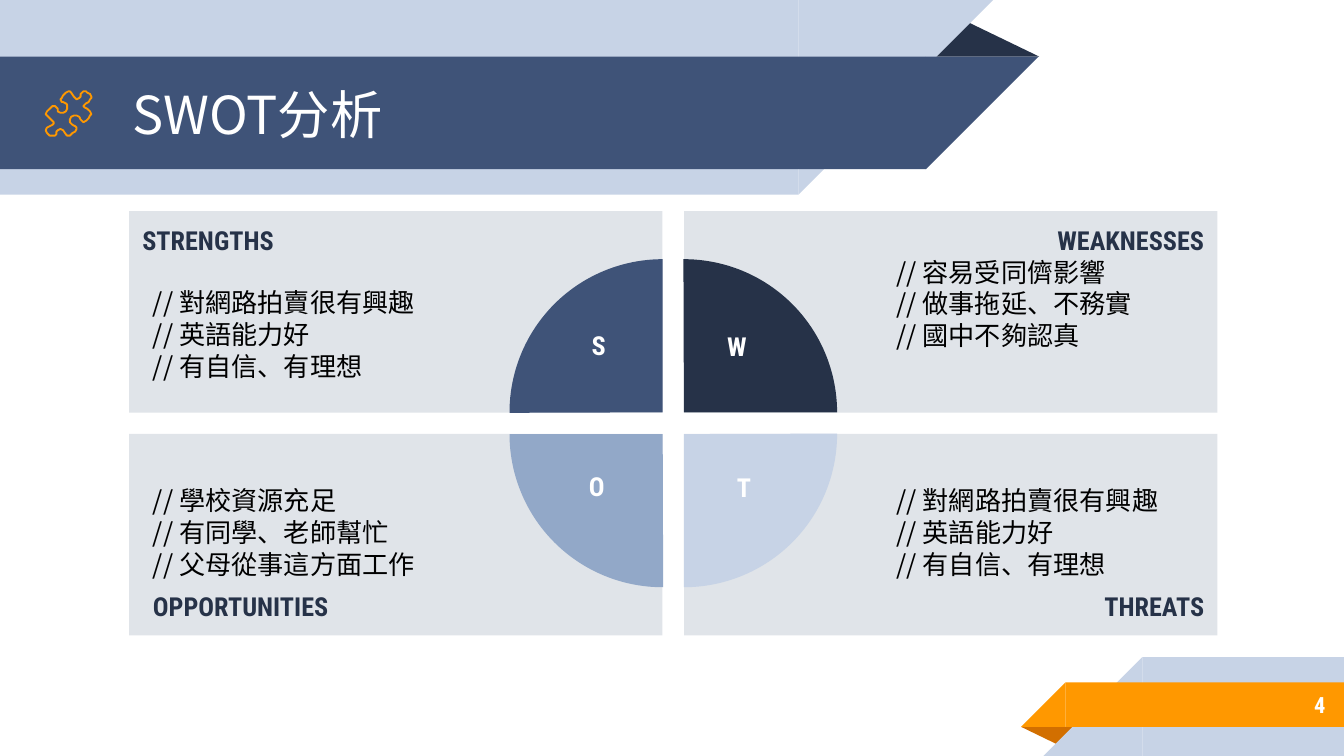
from dataclasses import dataclass

from lxml import etree
from pptx import Presentation, util as u
from pptx.dml.color import RGBColor
from pptx.enum import shapes, text
from pptx.oxml import ns

Cm, Pt = u.Cm, u.Pt
SHAPE, ALIGN, ANCHOR = shapes.MSO_SHAPE, text.PP_ALIGN, text.MSO_ANCHOR


@dataclass(frozen=True)
class Theme:
    navy: str = "3F5378"
    ink: str = "263248"
    steel: str = "92A8C8"
    pale: str = "C7D3E6"
    card: str = "E0E4E9"
    orange: str = "FF9800"
    rust: str = "D26F00"
    white: str = "FFFFFF"
    black: str = "000000"
    cjk: str = "Noto Sans CJK SC"
    latin: str = "Roboto Condensed"
    title_size: float = 28
    body_size: float = 14
    number_size: float = 12
    line_pitch: float = 17


THEME = Theme()

# Outline of the puzzle piece, in hundredths of an inch
PUZZLE = [
    (64, 77), (66, 76), (67, 74), (68, 73), (68, 72), (67, 70), (65, 69),
    (64, 68), (62, 68), (61, 69), (60, 70), (60, 72), (59, 73), (57, 74),
    (56, 73), (55, 72), (53, 69), (52, 68), (51, 68), (49, 69), (47, 71),
    (46, 73), (45, 74), (46, 76), (47, 76), (49, 77), (50, 78), (50, 81),
    (49, 83), (47, 84), (45, 84), (43, 83), (43, 81), (42, 80), (41, 79),
    (39, 79), (37, 81), (35, 83), (34, 85), (35, 86), (37, 88), (39, 90),
    (40, 91), (40, 92), (39, 93), (37, 94), (35, 95), (34, 97), (35, 99),
    (36, 100), (37, 101), (39, 101), (41, 101), (42, 100), (42, 98),
    (43, 97), (45, 96), (47, 97), (49, 100), (50, 101), (52, 101),
    (54, 99), (56, 98), (57, 96), (57, 95), (56, 94), (54, 93), (53, 92),
    (52, 91), (52, 89), (53, 87), (55, 86), (57, 86), (59, 87), (60, 89),
    (61, 90), (62, 91), (64, 90), (66, 88), (67, 86), (68, 85), (67, 83),
    (65, 81), (63, 80), (62, 79), (63, 78),
]

# Heading, letter, letter box (cm), pie colour, lines
QUADRANTS = [
    ("STRENGTHS", "S", (10.97, 6.1, 0.69, 1.09), THEME.navy,
     ["對網路拍賣很有興趣", "英語能力好", "有自信、有理想"]),
    ("WEAKNESSES", "W", (13.41, 6.12, 1.04, 1.04), THEME.ink,
     ["容易受同儕影響", "做事拖延、不務實", "國中不夠認真"]),
    ("OPPORTUNITIES", "O", (10.9, 8.76, 0.76, 1.09), THEME.steel,
     ["學校資源充足", "有同學、老師幫忙", "父母從事這方面工作"]),
    ("THREATS", "T", (13.69, 8.79, 0.74, 1.04), THEME.pale,
     ["對網路拍賣很有興趣", "英語能力好", "有自信、有理想"]),
]


def add_block(slide, kind, box, color, rotation=0, flip=False):
    block = slide.shapes.add_shape(kind, *map(Cm, box))
    block.shadow.inherit = False
    block.fill.solid()
    block.fill.fore_color.rgb = RGBColor.from_string(color)
    block.line.fill.background()
    block.rotation = rotation
    if flip:
        block._element.spPr.find(ns.qn("a:xfrm")).set("flipH", "1")
    return block


def add_ribbon(slide, box, color, header):
    """A band whose slanted end faces the middle of the slide."""
    x, y, width, height = box
    tip = x + width if header else x - height
    add_block(slide, SHAPE.RECTANGLE, box, color)
    add_block(slide, SHAPE.RIGHT_TRIANGLE, (tip, y, height, height), color,
              rotation=180 if header else 0, flip=True)


def add_fold(slide, box, color, rotation=0):
    fold = add_block(slide, SHAPE.ISOSCELES_TRIANGLE, box, color, rotation)
    fold.adjustments[0] = 0.32


def style(line, content, font, size, color, bold=False, align=ALIGN.LEFT):
    line.text = content
    line.alignment = align
    line.font.size, line.font.bold, line.font.name = Pt(size), bold, font
    line.font.color.rgb = RGBColor.from_string(color)
    # East Asian glyphs need the typeface as well
    defaults = line._p.get_or_add_pPr().find(ns.qn("a:defRPr"))
    etree.SubElement(defaults, ns.qn("a:ea")).set("typeface", font)


def set_frame(frame, anchor, left, top, right, bottom):
    frame.word_wrap = True
    frame.vertical_anchor = anchor
    frame.margin_left, frame.margin_top = Cm(left), Cm(top)
    frame.margin_right, frame.margin_bottom = Cm(right), Cm(bottom)


def add_label(slide, box, content, font, size, align, inset=0.25):
    frame = slide.shapes.add_textbox(*map(Cm, box)).text_frame
    set_frame(frame, ANCHOR.MIDDLE, inset, inset, inset, inset)
    style(frame.paragraphs[0], content, font, size, THEME.white,
          bold=font == THEME.latin, align=align)
    return frame


def indent(line):
    line._p.get_or_add_pPr().set("marL", str(Cm(0.2)))


def add_card(slide, column, row, heading, points):
    card = add_block(slide, SHAPE.RECTANGLE,
                     (2.44 + 10.49 * column, 3.99 + 4.21 * row, 10.08, 3.81),
                     THEME.card)
    frame = card.text_frame
    # The wide inset keeps the text clear of the pie
    left, right = (3.81, 0.25) if column else (0.25, 3.81)
    set_frame(frame, ANCHOR.BOTTOM if row else ANCHOR.TOP,
              left, 0.25, right, 0.25)

    entries = [(f"// {point}", False) for point in points]
    entries.insert(len(entries) if row else 0, (heading, True))
    for number, (content, is_heading) in enumerate(entries):
        line = frame.add_paragraph() if number else frame.paragraphs[0]
        if is_heading:
            style(line, content, THEME.latin, THEME.body_size, THEME.ink, True,
                  ALIGN.RIGHT if column else ALIGN.LEFT)
            if row:
                line.space_before = line.space_after = Pt(6)
        else:
            style(line, content, THEME.cjk, THEME.body_size, THEME.black)
            line.line_spacing = Pt(THEME.line_pitch)
        if row or not is_heading:
            indent(line)
    if (column, row) == (0, 0):
        frame.paragraphs[1].space_before = Pt(16.5)


def add_pie(slide, column, row, color):
    turn = (270 if row else 0) if column == 0 else (180 if row else 90)
    pie = add_block(slide, SHAPE.PIE,
                    (9.63 + 0.4 * column, 4.9 + 0.41 * row, 5.79, 5.79),
                    color, turn)
    pie.adjustments[0], pie.adjustments[1] = 107.89, 162


def add_puzzle(slide):
    builder = slide.shapes.build_freeform(*PUZZLE[0], scale=Cm(2.54) / 100)
    builder.add_line_segments(PUZZLE[1:], close=True)
    puzzle = builder.convert_to_shape()
    puzzle.shadow.inherit = False
    puzzle.fill.background()
    puzzle.line.color.rgb = RGBColor.from_string(THEME.orange)
    puzzle.line.width = Pt(1)


def main():
    deck = Presentation()
    deck.slide_width, deck.slide_height = Cm(25.4), Cm(14.29)
    slide = deck.slides.add_slide(deck.slide_layouts[6])

    # Header ribbons
    add_fold(slide, (17.48, 0.36, 2.16, 0.71), THEME.ink)
    add_ribbon(slide, (0, 0, 15.09, 3.68), THEME.pale, header=True)
    add_ribbon(slide, (0, 1.07, 17.5, 2.13), THEME.navy, header=True)

    # Footer ribbons
    add_fold(slide, (19.3, 13.74, 1.09, 0.36), THEME.rust, rotation=180)
    add_ribbon(slide, (21.59, 12.42, 3.81, 1.87), THEME.pale, header=False)
    add_ribbon(slide, (20.14, 12.9, 5.26, 0.84), THEME.orange, header=False)

    # Title and slide number
    add_label(slide, (2.26, 1.09, 14.6, 2.13), "SWOT分析", THEME.cjk,
              THEME.title_size, ALIGN.LEFT)
    add_label(slide, (21.16, 12.88, 4.14, 0.89), "4", THEME.latin,
              THEME.number_size, ALIGN.RIGHT)

    # Cards, then the pies and letters above them
    for place, (heading, _, _, _, points) in enumerate(QUADRANTS):
        add_card(slide, place % 2, place // 2, heading, points)
    for place, (_, _, _, color, _) in enumerate(QUADRANTS):
        add_pie(slide, place % 2, place // 2, color)
    for _, letter, box, _, _ in QUADRANTS:
        frame = add_label(slide, box, letter, THEME.latin, THEME.body_size,
                          ALIGN.CENTER, inset=0.13)
        frame.vertical_anchor = ANCHOR.TOP
        frame.word_wrap = False

    add_puzzle(slide)
    deck.save("out.pptx")


if __name__ == "__main__":
    main()
